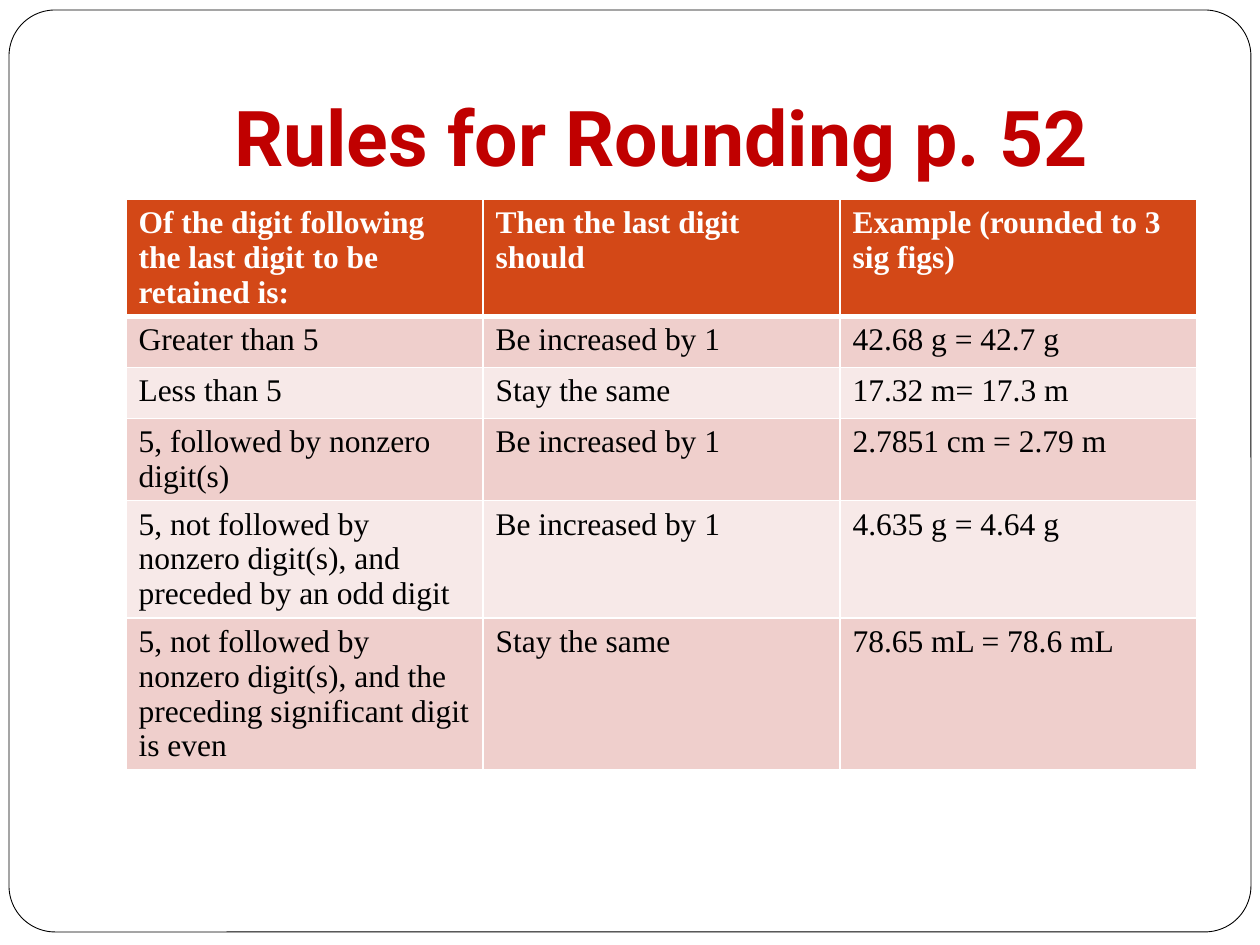
from dataclasses import dataclass

from lxml import etree
from pptx import Presentation
from pptx.dml.color import RGBColor
from pptx.enum.shapes import MSO_SHAPE
from pptx.enum.text import MSO_ANCHOR, MSO_AUTO_SIZE, PP_ALIGN
from pptx.oxml.ns import qn
from pptx.util import Emu, Pt

ROUND_RECT = MSO_SHAPE.ROUNDED_RECTANGLE
BOTTOM, CENTER, NO_FIT = MSO_ANCHOR.BOTTOM, PP_ALIGN.CENTER, MSO_AUTO_SIZE.NONE
TITLE_ONLY = 5
PX_PER_INCH = 126


@dataclass(frozen=True)
class Theme:
    title_font: str = "Roboto"
    body_font: str = "Times New Roman"
    title_size: int = 44
    body_size: int = 18
    paper: str = "FFFFFF"
    ink: str = "000000"
    title: str = "C00000"
    header: str = "D34817"
    bands: tuple = ("EFCFCC", "F7E9E8")
    frame_line: float = 0.5
    grid_line: int = 1
    header_line: int = 3


THEME = Theme()
FRAME_BOX = (9, 10, 1242, 922)
TITLE_BOX = (126, 38, 1071, 157)
TABLE_BOX = (126, 199, 1071, 568)
ROW_HEIGHT = 51  # least height; rows with wrapped text grow

TITLE = "Rules for Rounding p. 52"
RULES = [
    ("Of the digit following the last digit to be retained is:",
     "Then the last digit should", "Example (rounded to 3 sig figs)"),
    ("Greater than 5", "Be increased by 1", "42.68 g = 42.7 g"),
    ("Less than 5", "Stay the same", "17.32 m= 17.3 m"),
    ("5, followed by nonzero digit(s)", "Be increased by 1", "2.7851 cm = 2.79 m"),
    ("5, not followed by nonzero digit(s), and preceded by an odd digit",
     "Be increased by 1", "4.635 g = 4.64 g"),
    ("5, not followed by nonzero digit(s), and the preceding significant digit is even",
     "Stay the same", "78.65 mL = 78.6 mL"),
]


def px(n):
    return Emu(round(n * 914400 / PX_PER_INCH))


def rgb(color):
    return RGBColor.from_string(color)


def write(tf, text, color, **font):
    p = tf.paragraphs[0]
    r = p.add_run()
    r.text = text
    r.font.color.rgb = rgb(color)
    for name, value in font.items():
        setattr(r.font, name, value)
    return p


def add_frame(s, box):
    sp = s.shapes.add_shape(ROUND_RECT, *map(px, box))
    sp.adjustments[0] = 0.05
    sp.shadow.inherit = False
    sp.fill.solid()
    sp.fill.fore_color.rgb = rgb(THEME.paper)
    sp.line.color.rgb = rgb(THEME.ink)
    sp.line.width = Pt(THEME.frame_line)
    # Send behind the title
    s.shapes.title._element.addprevious(sp._element)


def add_title(s, box):
    sp = s.shapes.title
    for name, value in zip(("left", "top", "width", "height"), box):
        setattr(sp, name, px(value))
    tf = sp.text_frame
    layout = dict(vertical_anchor=BOTTOM, word_wrap=True, auto_size=NO_FIT,
                  margin_bottom=px(13))
    for name, value in layout.items():
        setattr(tf, name, value)
    p = write(tf, TITLE, THEME.title, name=THEME.title_font,
              size=Pt(THEME.title_size), bold=True)
    p.alignment = CENTER


def set_borders(cell, widths):
    tc_pr = cell._tc.get_or_add_tcPr()
    for side, width in widths.items():
        ln = etree.SubElement(tc_pr, qn(f"a:ln{side}"), w=str(Pt(width)))
        fill = etree.SubElement(ln, qn("a:solidFill"))
        etree.SubElement(fill, qn("a:srgbClr"), val=THEME.paper)


def format_cell(cell, text, row):
    is_header = row == 0
    widths = dict.fromkeys("LRTB", THEME.grid_line)
    if is_header:
        widths["B"] = THEME.header_line
    elif row == 1:
        widths["T"] = THEME.header_line
    set_borders(cell, widths)
    cell.fill.solid()
    band = THEME.bands[(row - 1) % 2]
    cell.fill.fore_color.rgb = rgb(THEME.header if is_header else band)
    write(cell.text_frame, text, THEME.paper if is_header else THEME.ink,
          name=THEME.body_font, size=Pt(THEME.body_size), bold=is_header)


def add_rules_table(s, box):
    columns = len(RULES[0])
    gf = s.shapes.add_table(len(RULES), columns, *map(px, box))
    table = gf.table
    for column in table.columns:
        column.width = px(box[2] // columns)
    for i, texts in enumerate(RULES):
        table.rows[i].height = px(ROW_HEIGHT)
        for j, text in enumerate(texts):
            format_cell(table.cell(i, j), text, i)
    gf.height = px(box[3])


def main():
    prs = Presentation()
    prs.slide_width, prs.slide_height = px(1260), px(945)
    s = prs.slides.add_slide(prs.slide_layouts[TITLE_ONLY])
    add_frame(s, FRAME_BOX)
    add_title(s, TITLE_BOX)
    add_rules_table(s, TABLE_BOX)
    prs.save("out.pptx")


if __name__ == "__main__":
    main()
